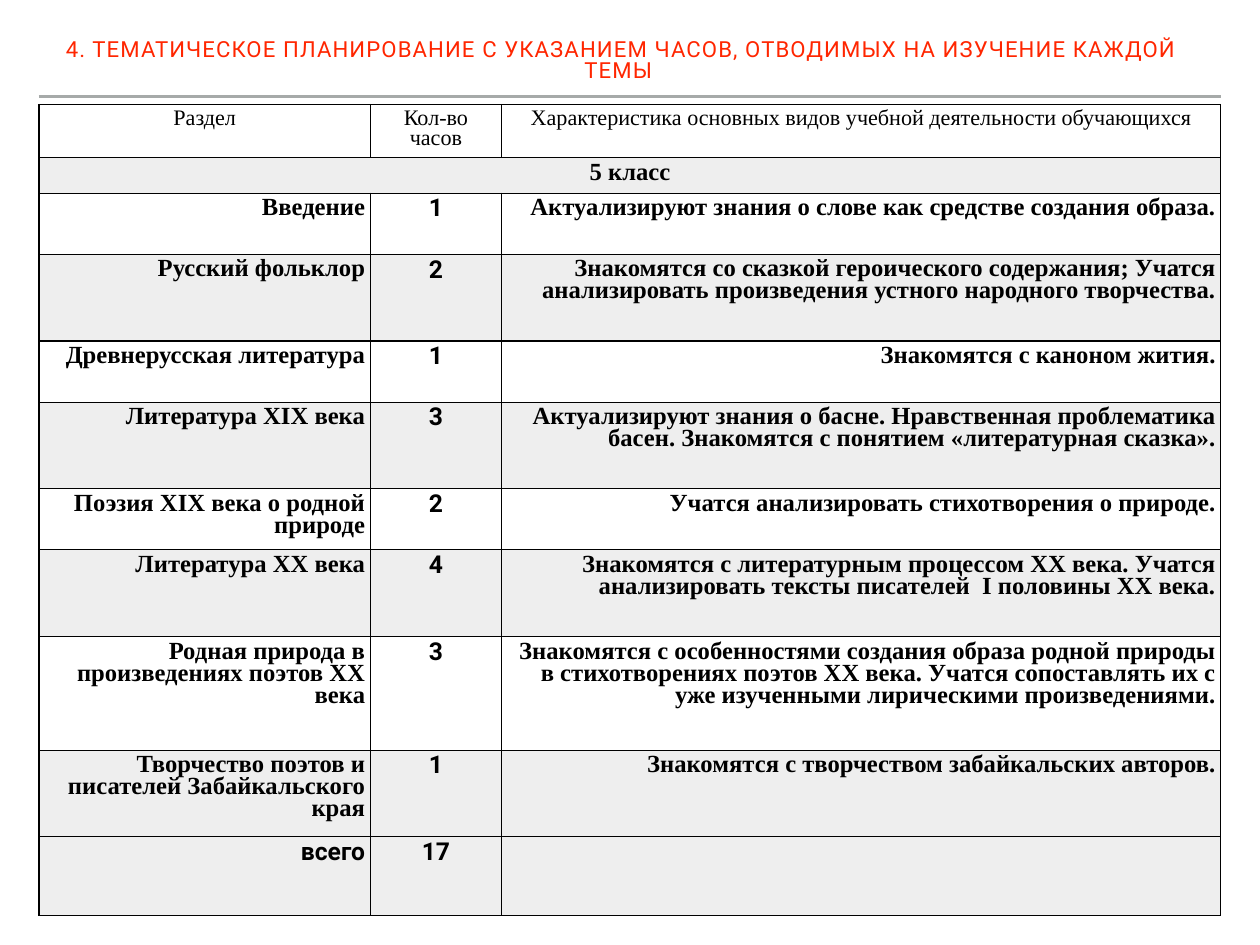
from lxml.etree import SubElement
from pptx import Presentation
from pptx.dml.color import RGBColor
from pptx.enum.shapes import MSO_CONNECTOR
from pptx.enum.text import MSO_ANCHOR, MSO_AUTO_SIZE, PP_ALIGN
from pptx.oxml.ns import qn
from pptx.util import Inches, Pt

BLACK = RGBColor(0x00, 0x00, 0x00)
RED = RGBColor(0xFF, 0x26, 0x00)
GRAY = RGBColor(0xA6, 0xAA, 0xA9)
PALE = RGBColor(0xEE, 0xEE, 0xEE)
SANS = "Roboto"
SERIF = "Times New Roman"
PAD = Inches(0.06)

TITLE = "4. ТЕМАТИЧЕСКОЕ ПЛАНИРОВАНИЕ С УКАЗАНИЕМ ЧАСОВ, ОТВОДИМЫХ НА ИЗУЧЕНИЕ КАЖДОЙ ТЕМЫ "
HEAD = ("Раздел", "Кол-во часов", "Характеристика основных видов учебной деятельности обучающихся")
GRADE = "5 класс"
TOPICS = [
    ("Введение", "1", "Актуализируют знания о слове как средстве создания образа."),
    ("Русский фольклор", "2", "Знакомятся со сказкой героического содержания; Учатся "
     "анализировать произведения устного народного творчества."),
    ("Древнерусская литература", "1", "Знакомятся с каноном жития."),
    ("Литература XIX века", "3", "Актуализируют знания о басне. Нравственная проблематика "
     "басен. Знакомятся с понятием «литературная сказка»."),
    ("Поэзия ХIХ века о родной природе", "2", "Учатся анализировать стихотворения о природе."),
    ("Литература XX века", "4", "Знакомятся с литературным процессом ХХ века. Учатся "
     "анализировать тексты писателей  I половины ХХ века."),
    ("Родная природа в произведениях поэтов XX века", "3",
     "Знакомятся с особенностями создания образа родной природы в стихотворениях поэтов ХХ века. "
     "Учатся сопоставлять их с уже изученными лирическими произведениями."),
    ("Творчество поэтов и писателей Забайкальского края", "1",
     "Знакомятся с творчеством забайкальских авторов."),
    ("всего", "17", ""),
]
COLS = (3.74, 1.48, 8.12)
ROWS = (0.55, 0.4, 0.69, 0.98, 0.69, 0.98, 0.69, 0.98, 1.28, 0.98, 0.89)


def write(frame, text, size=20, font=SERIF, color=BLACK, bold=False, align=PP_ALIGN.CENTER, gap=0):
    para = frame.paragraphs[0]
    para.alignment = align
    para.line_spacing = 0.8
    if not text:
        return
    run = para.add_run()
    run.text = text
    run.font.size = Pt(size)
    run.font.name = font
    run.font.bold = bold
    run.font.color.rgb = color
    if gap:
        run.font._element.set("spc", str(gap))


class Page:
    """Holds the slide and the style of its elements."""

    def __init__(self, slide, edge=BLACK, band=PALE):
        self.slide = slide
        self.edge = edge
        self.band = band

    def text(self, text, left, top, width, height, **style):
        box = self.slide.shapes.add_textbox(Inches(left), Inches(top), Inches(width), Inches(height))
        frame = box.text_frame
        frame.word_wrap = True
        frame.auto_size = MSO_AUTO_SIZE.SHAPE_TO_FIT_TEXT
        frame.vertical_anchor = MSO_ANCHOR.BOTTOM
        frame.margin_left = frame.margin_right = PAD
        frame.margin_top = frame.margin_bottom = PAD
        write(frame, text, **style)

    def line(self, left, right, top, color, width):
        line = self.slide.shapes.add_connector(
            MSO_CONNECTOR.STRAIGHT, Inches(left), Inches(top), Inches(right), Inches(top))
        line.line.color.rgb = color
        line.line.width = Pt(width)
        SubElement(line._element.spPr, qn("a:effectLst"))

    def table(self, left, top, cols, rows):
        table = self.slide.shapes.add_table(
            len(rows), len(cols), Inches(left), Inches(top),
            Inches(sum(cols)), Inches(sum(rows))).table
        table.first_row = table.horz_banding = False
        for col, width in zip(table.columns, cols):
            col.width = Inches(width)
        for row, height in zip(table.rows, rows):
            row.height = Inches(height)
        return table

    def cell(self, cell, text, shade=False, **style):
        cell.margin_left = cell.margin_right = PAD
        cell.margin_top = cell.margin_bottom = PAD
        props = cell._tc.get_or_add_tcPr()
        for side in ("L", "R", "T", "B"):
            line = SubElement(props, qn(f"a:ln{side}"), w=str(Pt(1)))
            fill = SubElement(line, qn("a:solidFill"))
            SubElement(fill, qn("a:srgbClr"), val=str(self.edge))
        if shade:
            cell.fill.solid()
            cell.fill.fore_color.rgb = self.band
        else:
            cell.fill.background()
        write(cell.text_frame, text, **style)


def main():
    deck = Presentation()
    deck.slide_width = Inches(14.22)
    deck.slide_height = Inches(10.67)
    page = Page(deck.slides.add_slide(deck.slide_layouts[6]))
    page.line(0.44, 13.78, 1.09, GRAY, 2)
    page.text(TITLE, 0.44, 0.6, 13.15, 0.4, size=18, font=SANS, color=RED, gap=90)

    table = page.table(0.44, 1.18, COLS, ROWS)
    for col, text in enumerate(HEAD):
        page.cell(table.cell(0, col), text, size=18)
    table.cell(1, 0).merge(table.cell(1, 2))
    for col, text in enumerate((GRADE, "", "")):
        page.cell(table.cell(1, col), text, shade=True, bold=True)
    last = len(ROWS) - 1
    for row, topic in enumerate(TOPICS, 2):
        for col, text in enumerate(topic):
            page.cell(
                table.cell(row, col), text, shade=row % 2 == 1 or row == last, bold=True,
                font=SANS if col == 1 or row == last else SERIF,
                align=PP_ALIGN.CENTER if col == 1 else PP_ALIGN.RIGHT)
    deck.save("out.pptx")


if __name__ == "__main__":
    main()
